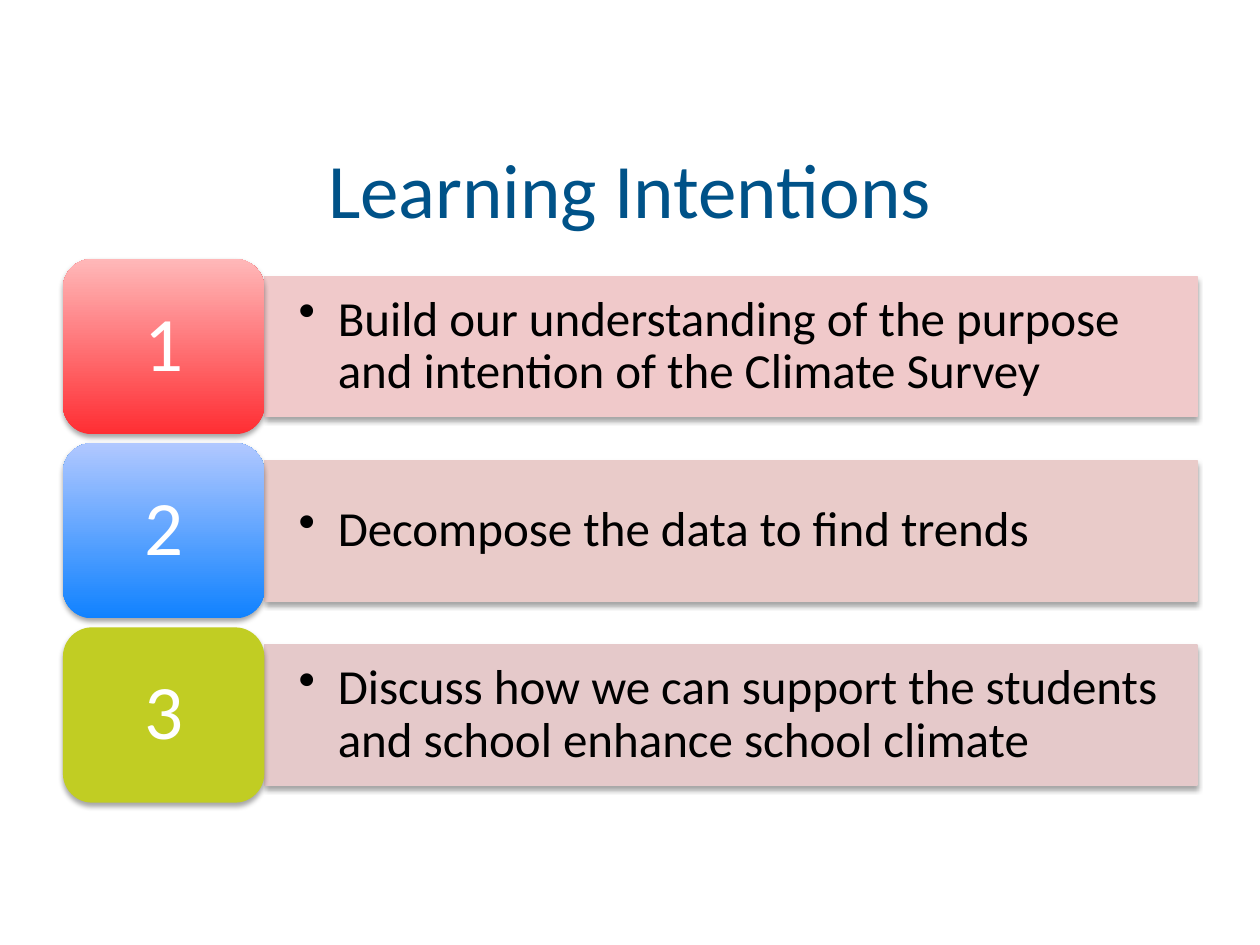
from dataclasses import dataclass

from lxml.etree import SubElement
from pptx import Presentation
from pptx.dml.color import RGBColor
from pptx.enum.shapes import MSO_SHAPE as Preset
from pptx.enum.text import MSO_ANCHOR as Anchor, PP_ALIGN as Align
from pptx.oxml.ns import qn
from pptx.util import Cm, Pt


@dataclass(frozen=True)
class Theme:
    """Colours and type sizes of the slide."""
    font: str = "Calibri"
    title_color: str = "005288"
    body_color: str = "000000"
    badge_color: str = "FFFFFF"
    shadow_color: str = "000000"
    large: int = 44
    body: int = 28


THEME = Theme()

INTENTIONS = [
    ("Build our understanding of the purpose and intention of the Climate Survey",
     "F0C9CA", ("FF2E33", "FFB8B9")),
    ("Decompose the data to find trends", "E9CBC9", ("1082FF", "B1C8FF")),
    ("Discuss how we can support the students and school enhance school climate",
     "E5C9CA", ("C1CD23",)),
]


def set_text(shape, text, size, color, align, inset):
    """Write one vertically centred paragraph and return it."""
    frame = shape.text_frame
    frame.word_wrap = True
    frame.vertical_anchor = Anchor.MIDDLE
    frame.margin_left = frame.margin_right = Cm(inset)
    frame.margin_top = frame.margin_bottom = Cm(inset / 2)
    frame.text = text
    paragraph = frame.paragraphs[0]
    paragraph.alignment = align
    font = paragraph.runs[0].font
    font.name, font.size = THEME.font, Pt(size)
    font.color.rgb = RGBColor.from_string(color)
    return paragraph


def add_bullet(paragraph, indent):
    """Give the paragraph a round bullet with a hanging indent."""
    properties = paragraph._p.get_or_add_pPr()
    properties.set("marL", str(Cm(indent)))
    properties.set("indent", str(-Cm(indent)))
    SubElement(properties, qn("a:buChar"), char="•")


def add_shadow(shape):
    """Add a soft shadow below the shape."""
    shape.shadow.inherit = False
    effects = shape._element.spPr.find(qn("a:effectLst"))
    shadow = SubElement(effects, qn("a:outerShdw"), blurRad=str(Pt(3.1)),
                        dist=str(Pt(1.8)), dir="5400000", rotWithShape="0")
    color = SubElement(shadow, qn("a:srgbClr"), val=THEME.shadow_color)
    SubElement(color, qn("a:alpha"), val="35000")


def fill_shape(shape, colors):
    """Fill with one colour, or with two blended from bottom to top."""
    if len(colors) == 1:
        shape.fill.solid()
        shape.fill.fore_color.rgb = RGBColor.from_string(colors[0])
        return
    shape.fill.gradient()
    shape.fill.gradient_angle = 90
    for stop, color in zip(shape.fill.gradient_stops, colors):
        stop.color.rgb = RGBColor.from_string(color)


def add_title(slide, left, top, width, height):
    """Place the centred slide title."""
    title = slide.shapes.add_textbox(Cm(left), Cm(top), Cm(width), Cm(height))
    set_text(title, "Learning Intentions", THEME.large, THEME.title_color,
             Align.CENTER, 0.25)


def add_intention(slide, left, top, width, height, number, intention):
    """Place a numbered badge with its text bar on the right."""
    text, bar_color, badge_colors = intention
    badge_width, bar_height = 4.06, height * 0.8
    bar = slide.shapes.add_shape(
        Preset.RECTANGLE, Cm(left + badge_width), Cm(top + (height - bar_height) / 2),
        Cm(width - badge_width), Cm(bar_height))
    fill_shape(bar, [bar_color])
    bar.line.color.rgb = RGBColor.from_string(bar_color)
    bar.line.width = Pt(0.75)
    add_shadow(bar)
    paragraph = set_text(bar, text, THEME.body, THEME.body_color, Align.LEFT, 0.69)
    paragraph.line_spacing = 0.9
    add_bullet(paragraph, 0.79)

    badge = slide.shapes.add_shape(Preset.ROUNDED_RECTANGLE, Cm(left), Cm(top),
                                   Cm(badge_width), Cm(height))
    fill_shape(badge, badge_colors)
    badge.line.fill.background()
    add_shadow(badge)
    paragraph = set_text(badge, str(number), THEME.large, THEME.badge_color,
                         Align.CENTER, 0.46)
    paragraph.line_spacing = 0.9


def add_intentions(slide, left, top, width, height):
    """Stack the intentions with equal gaps in the given box."""
    gap = 0.18
    row_height = (height + gap) / len(INTENTIONS) - gap
    for index, intention in enumerate(INTENTIONS):
        add_intention(slide, left, top + index * (row_height + gap), width,
                      row_height, index + 1, intention)


def main():
    """Build and save the slide."""
    presentation = Presentation()
    presentation.slide_width, presentation.slide_height = Cm(25.4), Cm(19.05)
    slide = presentation.slides.add_slide(presentation.slide_layouts[6])
    add_title(slide, 1.27, 2.67, 22.86, 2.24)
    add_intentions(slide, 1.27, 5.22, 22.86, 10.96)
    presentation.save("out.pptx")


if __name__ == "__main__":
    main()
